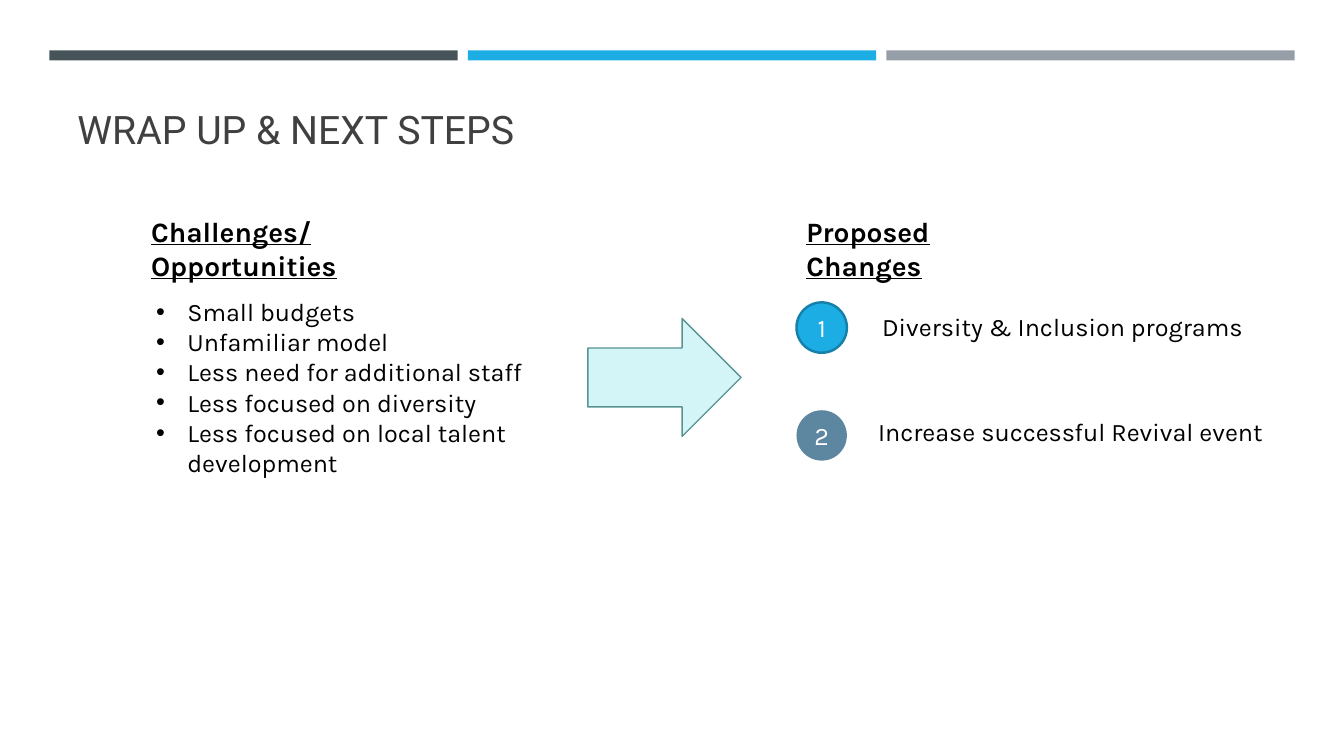
from dataclasses import dataclass

import lxml.etree
import pptx
import pptx.dml.color
import pptx.enum.shapes
import pptx.enum.text
import pptx.oxml.ns
import pptx.util
from pptx.util import Inches

RGBColor = pptx.dml.color.RGBColor
MSO_SHAPE = pptx.enum.shapes.MSO_SHAPE
SLATE = RGBColor(0x46, 0x53, 0x59)
BLUE = RGBColor(0x1C, 0xAD, 0xE4)
GRAY = RGBColor(0x96, 0x9F, 0xA7)
DARK_BLUE = RGBColor(0x15, 0x80, 0xA9)
STEEL = RGBColor(0x5D, 0x87, 0xA1)
PALE_TEAL = RGBColor(0xD4, 0xF5, 0xF7)
TEAL = RGBColor(0x57, 0x94, 0x90)
TITLE_GRAY = RGBColor(0x40, 0x40, 0x40)
BLACK = RGBColor(0, 0, 0)
WHITE = RGBColor(0xFF, 0xFF, 0xFF)


@dataclass
class Box:
    left: float
    top: float
    width: float
    height: float

    def lengths(self) -> tuple:
        return tuple(Inches(v) for v in (self.left, self.top, self.width, self.height))


@dataclass
class Label:
    lines: list[str]
    box: Box
    size: int = 18
    font: str = "Karla"
    color: RGBColor = BLACK
    heading: bool = False
    bulleted: bool = False


@dataclass
class Figure:
    kind: MSO_SHAPE
    box: Box
    fill: RGBColor
    line: RGBColor | None = None
    line_width: float = 1
    text: str = ""


BARS = [
    Figure(MSO_SHAPE.RECTANGLE, Box(0.49 + 4.15 * i, 0.5, 4.05, 0.1), color)
    for i, color in enumerate((SLATE, BLUE, GRAY))
]

FIGURES = BARS + [
    Figure(MSO_SHAPE.RIGHT_ARROW, Box(5.83, 3.16, 1.52, 1.17), PALE_TEAL, TEAL),
    Figure(MSO_SHAPE.FLOWCHART_CONNECTOR, Box(7.9, 3, 0.5, 0.5), BLUE, DARK_BLUE, 1.75, "1"),
    Figure(MSO_SHAPE.FLOWCHART_CONNECTOR, Box(7.9, 4.07, 0.5, 0.5), STEEL, text="2"),
]

LABELS = [
    Label(["WRAP UP & NEXT STEPS"], Box(0.67, 1, 12.06, 1.3), 28, "Roboto", TITLE_GRAY),
    Label(["Challenges/Opportunities"], Box(1.4, 2.08, 3.24, 0.44), 20, heading=True),
    Label(["Proposed Changes"], Box(7.9, 2.08, 2.41, 0.44), 20, heading=True),
    Label(
        [
            "Small budgets",
            "Unfamiliar model",
            "Less need for additional staff",
            "Less focused on diversity",
            "Less focused on local talent development",
        ],
        Box(1.45, 2.89, 4.83, 2.22),
        bulleted=True,
    ),
    Label(["Diversity & Inclusion programs"], Box(8.65, 3.04, 4.5, 0.4)),
    Label(["Increase successful Revival event"], Box(8.61, 4.08, 4.38, 0.4)),
]


def style_run(r, size: int, font: str, color: RGBColor) -> None:
    r.font.size = pptx.util.Pt(size)
    r.font.name = font
    r.font.color.rgb = color


def add_bullet(p) -> None:
    pPr = p._p.get_or_add_pPr()
    pPr.set("marL", str(Inches(0.31)))
    pPr.set("indent", str(Inches(-0.31)))
    qn = pptx.oxml.ns.qn
    lxml.etree.SubElement(pPr, qn("a:buFont")).set("typeface", "Arial")
    lxml.etree.SubElement(pPr, qn("a:buChar")).set("char", "•")


def draw_figure(s, figure: Figure) -> None:
    sp = s.shapes.add_shape(figure.kind, *figure.box.lengths())
    sp.shadow.inherit = False
    sp.fill.solid()
    sp.fill.fore_color.rgb = figure.fill
    if figure.line is None:
        sp.line.fill.background()
    else:
        sp.line.color.rgb = figure.line
        sp.line.width = pptx.util.Pt(figure.line_width)
    if figure.text:
        tf = sp.text_frame
        tf.margin_left = tf.margin_right = tf.margin_top = tf.margin_bottom = 0
        tf.vertical_anchor = pptx.enum.text.MSO_ANCHOR.MIDDLE
        tf.text = figure.text
        p = tf.paragraphs[0]
        p.alignment = pptx.enum.text.PP_ALIGN.CENTER
        style_run(p.runs[0], 18, "Karla", WHITE)


def draw_label(s, label: Label) -> None:
    tf = s.shapes.add_textbox(*label.box.lengths()).text_frame
    tf.word_wrap = True
    tf.text = "\n".join(label.lines)
    for p in tf.paragraphs:
        if label.bulleted:
            add_bullet(p)
        r = p.runs[0]
        style_run(r, label.size, label.font, label.color)
        if label.heading:
            r.font.bold = True
            r.font.underline = True


def main() -> None:
    prs = pptx.Presentation()
    prs.slide_width = Inches(13.33)
    prs.slide_height = Inches(7.5)
    s = prs.slides.add_slide(prs.slide_layouts[6])
    for figure in FIGURES:
        draw_figure(s, figure)
    for label in LABELS:
        draw_label(s, label)
    prs.save("out.pptx")


if __name__ == "__main__":
    main()
